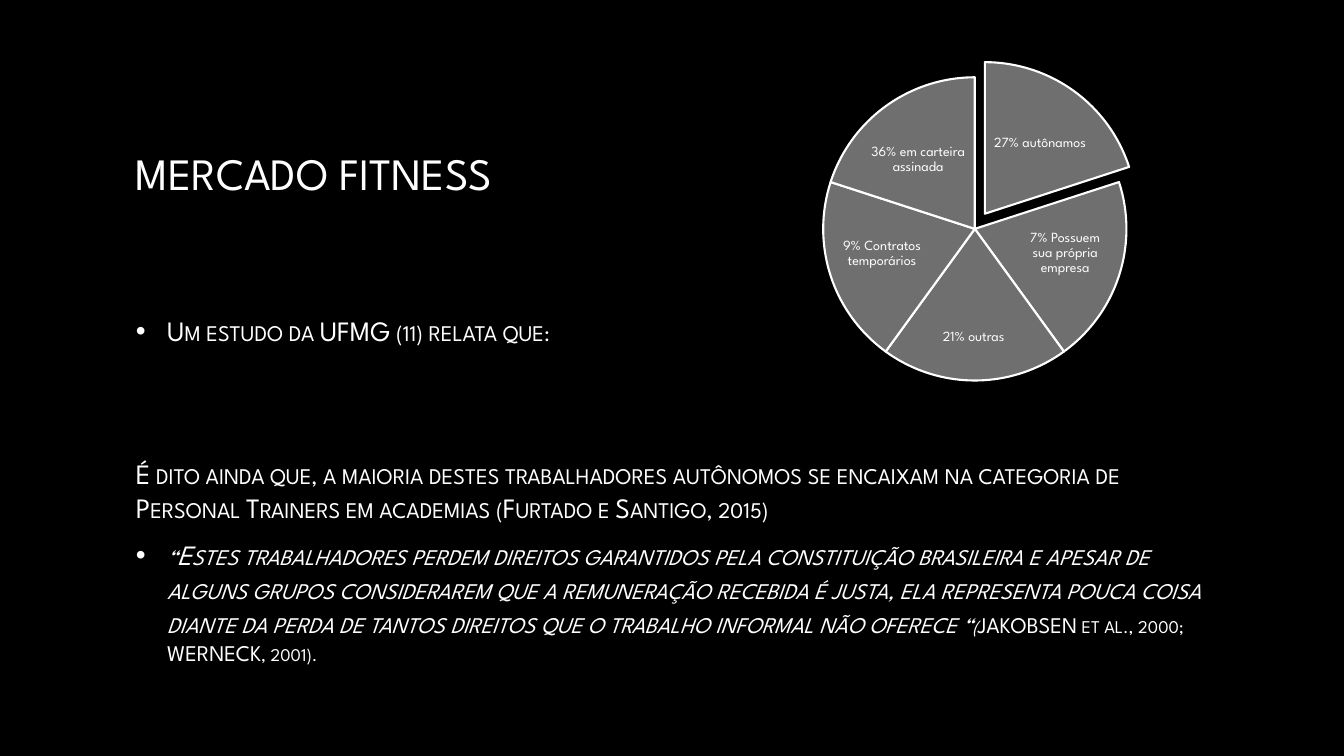
"""Builds a dark slide on the fitness job market with a five-part pie."""
from lxml import etree
from pptx import Presentation, util as u
from pptx.dml.color import RGBColor
from pptx.enum import shapes, text
from pptx.oxml.ns import qn

BLACK = RGBColor(0x00, 0x00, 0x00)
WHITE = RGBColor(0xFF, 0xFF, 0xFF)
GRAY = RGBColor(0x6F, 0x6F, 0x6F)
COLUMNS, ROWS = 160, 90
PIE_LEFT, PIE_TOP, PIE_SIZE = 98, 9.2, 36.1
EXPLODED = (1.2, -1.8)
SLICES = [
    ("27% autônamos", 117.7, 12.8, 12.2, 8.4),
    ("7% Possuem sua própria empresa", 121.4, 25.6, 10.8, 9.1),
    ("21% outras", 109.4, 36.2, 13, 7.8),
    ("9% Contratos temporários", 99.6, 25.6, 10.8, 9.1),
    ("36% em carteira assinada", 103.2, 14.8, 12.2, 8.4),
]
STUDY = "Um estudo da UFMG (11) relata que:"
TRAINERS = ("É dito ainda que, a maioria destes trabalhadores autônomos se encaixam "
            "na categoria de Personal Trainers em academias (Furtado e Santigo, 2015)")
QUOTE = ("“Estes trabalhadores perdem direitos garantidos pela constituição brasileira "
         "e apesar de alguns grupos considerarem que a remuneração recebida é justa, "
         "ela representa pouca coisa diante da perda de tantos direitos que o trabalho "
         "informal não oferece “")
SOURCE = "JAKOBSEN et al., 2000; WERNECK, 2001)."


class SlideBuilder:
    """Holds the style and the slide being filled."""

    def __init__(self, presentation, font="League Spartan"):
        self.font = font
        self.cell_width = presentation.slide_width / COLUMNS
        self.cell_height = presentation.slide_height / ROWS
        self.slide = presentation.slides.add_slide(presentation.slide_layouts[6])
        self.slide.background.fill.solid()
        self.slide.background.fill.fore_color.rgb = BLACK

    def place(self, left, top, width, height):
        return (round(left * self.cell_width), round(top * self.cell_height),
                round(width * self.cell_width), round(height * self.cell_height))

    def frame(self, area, anchor=text.MSO_ANCHOR.MIDDLE, inset=None):
        frame = self.slide.shapes.add_textbox(*self.place(*area)).text_frame
        frame.word_wrap = True
        frame.vertical_anchor = anchor
        if inset is not None:
            frame.margin_left = frame.margin_right = inset
            frame.margin_top = frame.margin_bottom = inset
        return frame

    def set_text(self, paragraph, runs, size, before=0, small_caps=False, bullet=False):
        for words, run_size, italic in runs:
            run = paragraph.add_run()
            run.text = words
            if len(runs) > 1:
                run.font.size = u.Pt(run_size)
                run.font.italic = italic
        paragraph.font.name = self.font
        paragraph.font.size = u.Pt(size)
        paragraph.font.color.rgb = WHITE
        paragraph.space_before = u.Pt(before)
        properties = paragraph._p.get_or_add_pPr()
        defaults = properties.find(qn("a:defRPr"))
        if small_caps:
            defaults.set("cap", "small")
        if bullet:
            properties.set("marL", str(u.Inches(0.31)))
            properties.set("indent", str(-u.Inches(0.31)))
            font = etree.Element(qn("a:buFont"), typeface="Arial")
            mark = etree.Element(qn("a:buChar"), char="•")
            defaults.addprevious(font)
            defaults.addprevious(mark)

    def title(self, words, *area):
        self.set_text(self.frame(area).paragraphs[0], [(words, 32, False)], 32)

    def body(self, paragraphs, inset_top, *area):
        frame = self.frame(area, text.MSO_ANCHOR.TOP)
        frame.margin_top = inset_top
        for index, (runs, before, bullet) in enumerate(paragraphs):
            paragraph = frame.add_paragraph() if index else frame.paragraphs[0]
            self.set_text(paragraph, runs, 20, before, True, bullet)

    def wedge(self, start, end, *area):
        wedge = self.slide.shapes.add_shape(shapes.MSO_SHAPE.PIE, *self.place(*area))
        wedge.adjustments[0] = start * 0.6
        wedge.adjustments[1] = end * 0.6
        wedge.shadow.inherit = False
        wedge.fill.solid()
        wedge.fill.fore_color.rgb = GRAY
        wedge.line.color.rgb = WHITE
        wedge.line.width = u.Pt(1.5)

    def label(self, words, *area):
        paragraph = self.frame(area, inset=u.Inches(0.01)).paragraphs[0]
        paragraph.alignment = text.PP_ALIGN.CENTER
        paragraph.line_spacing = 0.9
        paragraph.space_after = u.Pt(3.5)
        self.set_text(paragraph, [(words, 10, False)], 10)


def main():
    presentation = Presentation()
    presentation.slide_width = u.Inches(13.33)
    presentation.slide_height = u.Inches(7.5)
    builder = SlideBuilder(presentation)
    builder.title("MERCADO FITNESS", 15, 8, 130, 25)
    builder.body([
        ([(STUDY, 20, False)], 0, True),
        ([(TRAINERS, 20, False)], 78, False),
        ([(QUOTE, 20, True), ("(", 16, True), (SOURCE, 16, False)], 10, True),
    ], u.Inches(0.58), 15, 30.4, 130, 54.7)
    sweep = 360 / len(SLICES)
    for index, (words, *area) in enumerate(SLICES):
        start = (270 + index * sweep) % 360
        end = (start + sweep) % 360
        shift_x, shift_y = (0, 0) if index else EXPLODED
        builder.wedge(start, end, PIE_LEFT + shift_x, PIE_TOP + shift_y, PIE_SIZE, PIE_SIZE)
        builder.label(words, *area)
    presentation.save("out.pptx")


if __name__ == "__main__":
    main()
